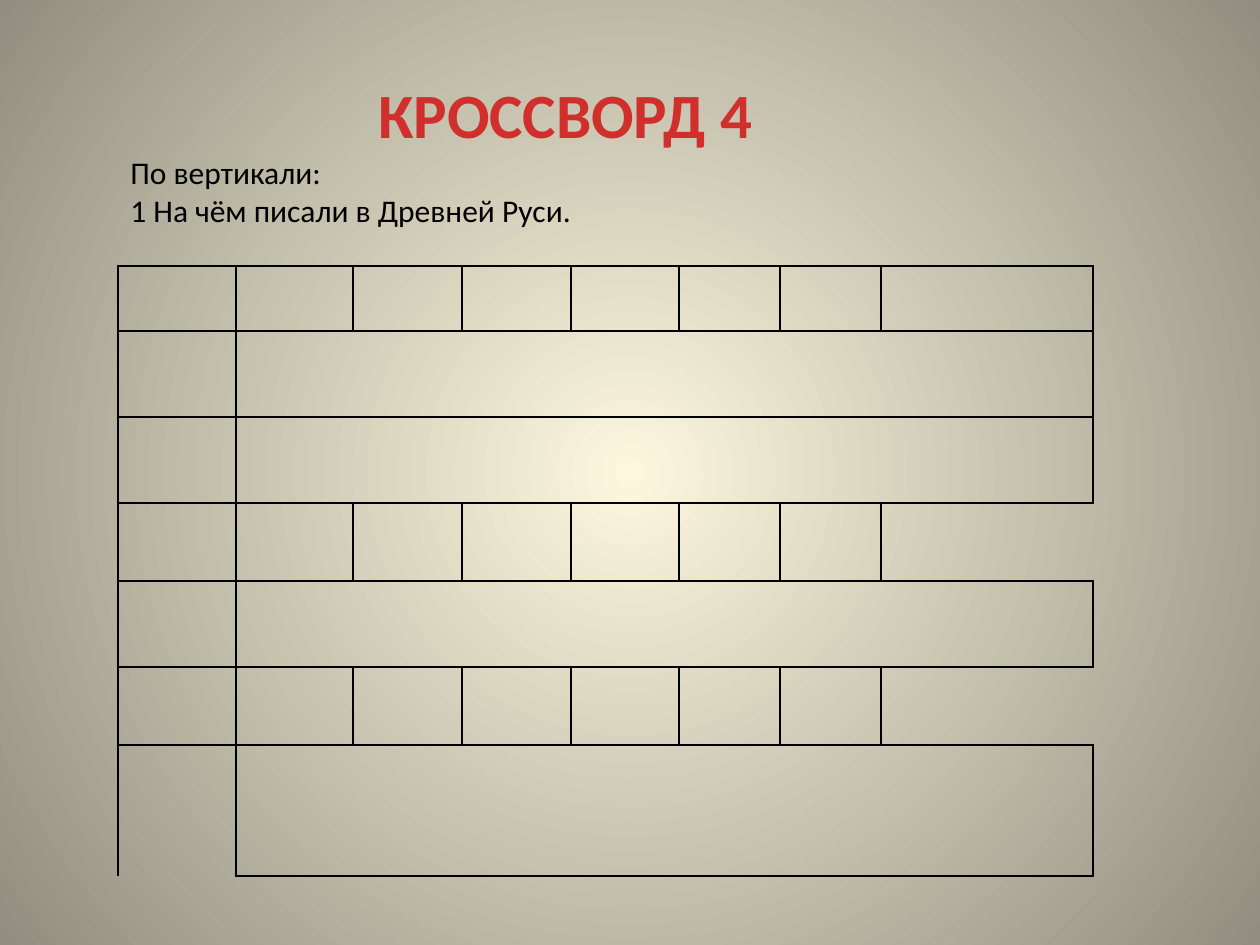
from lxml import etree
from pptx import Presentation
from pptx.dml.color import RGBColor
from pptx.enum.text import MSO_AUTO_SIZE, PP_ALIGN
from pptx.oxml import parse_xml
from pptx.oxml.ns import nsdecls, qn
from pptx.util import Pt

PX = 914400 / 126
FONT = "Calibri"
BLACK = RGBColor(0x00, 0x00, 0x00)
CREAM = RGBColor(0xFC, 0xF7, 0xDD)
TAUPE = RGBColor(0x91, 0x8E, 0x81)
LIGHT_RED = RGBColor(0xFC, 0x7C, 0x7A)
RED = RGBColor(0xD0, 0x2F, 0x2C)
DARK_RED = RGBColor(0xC7, 0x05, 0x00)

TITLE = ["КРОССВОРД 4 "]
CLUES = ["По вертикали:", "1 На чём писали в Древней Руси."]

COLUMN_WIDTHS = [118, 117, 109, 109, 108, 101, 101, 212]
ROW_HEIGHTS = [65, 86, 86, 78, 86, 78, 131]
MERGED_ROWS = [1, 2, 4, 6]
OPEN_SIDES = {(3, 7): "R", (5, 7): "R", (6, 0): "B"}

BACKGROUND_STOPS = [(0, CREAM), (100, TAUPE)]
BACKGROUND_SHADE = ('<a:path path="circle"><a:fillToRect l="50000" t="50000" '
                    'r="50000" b="50000"/></a:path>')
TITLE_STOPS = [(0, LIGHT_RED), (75, RED), (100, DARK_RED)]
TITLE_SHADE = '<a:lin ang="5400000" scaled="0"/>'


def px(*lengths):
    return [round(length * PX) for length in lengths]


def use_gradient(element, stops, shade):
    """Replace the solid fill found in the element by a gradient."""
    stop_xml = "".join(f'<a:gs pos="{position * 1000}"><a:srgbClr val="{color}"/></a:gs>'
                       for position, color in stops)
    solid = element.find(".//" + qn("a:solidFill"))
    solid.getparent().replace(solid, parse_xml(
        f'<a:gradFill {nsdecls("a")} rotWithShape="1">'
        f'<a:gsLst>{stop_xml}</a:gsLst>{shade}</a:gradFill>'))


def add_text(slide, box, lines, size, color=BLACK, bold=False,
             align=PP_ALIGN.LEFT, wrap=True):
    shape = slide.shapes.add_textbox(*px(*box))
    frame = shape.text_frame
    frame.word_wrap = wrap
    frame.auto_size = MSO_AUTO_SIZE.SHAPE_TO_FIT_TEXT
    frame.text = "\n".join(lines)
    for paragraph in frame.paragraphs:
        paragraph.alignment = align
        font = paragraph.runs[0].font
        font.name, font.size, font.bold = FONT, Pt(size), bold
        font.color.rgb = color
    return shape


def set_borders(cell, open_sides):
    properties = cell._tc.get_or_add_tcPr()
    for index, side in enumerate("LRTB"):
        line = etree.Element(qn(f"a:ln{side}"), w=str(Pt(1)))
        if side in open_sides:
            etree.SubElement(line, qn("a:noFill"))
        else:
            fill = etree.SubElement(line, qn("a:solidFill"))
            etree.SubElement(fill, qn("a:srgbClr"), val=str(BLACK))
        properties.insert(index, line)


def add_crossword(slide, left, top):
    size = px(left, top, sum(COLUMN_WIDTHS), sum(ROW_HEIGHTS))
    table = slide.shapes.add_table(len(ROW_HEIGHTS), len(COLUMN_WIDTHS), *size).table
    table.first_row = table.horz_banding = False
    for column, width in zip(table.columns, px(*COLUMN_WIDTHS)):
        column.width = width
    for row, height in zip(table.rows, px(*ROW_HEIGHTS)):
        row.height = height
    for row in MERGED_ROWS:
        table.cell(row, 1).merge(table.cell(row, len(COLUMN_WIDTHS) - 1))
    for row in range(len(ROW_HEIGHTS)):
        for column in range(len(COLUMN_WIDTHS)):
            cell = table.cell(row, column)
            cell.fill.background()
            if not cell.is_spanned:
                set_borders(cell, OPEN_SIDES.get((row, column), ""))


def main():
    presentation = Presentation()
    presentation.slide_width, presentation.slide_height = px(1260, 945)
    slide = presentation.slides.add_slide(presentation.slide_layouts[6])

    slide.background.fill.solid()
    slide.background.fill.fore_color.rgb = CREAM
    use_gradient(slide.element, BACKGROUND_STOPS, BACKGROUND_SHADE)

    title = add_text(slide, (364, 69, 417, 89), TITLE, 36, color=RED, bold=True,
                     align=PP_ALIGN.CENTER, wrap=False)
    use_gradient(title.element.txBody, TITLE_STOPS, TITLE_SHADE)
    add_crossword(slide, 118, 266)
    add_text(slide, (118, 147, 767, 89), CLUES, 18)

    presentation.save("out.pptx")


if __name__ == "__main__":
    main()
